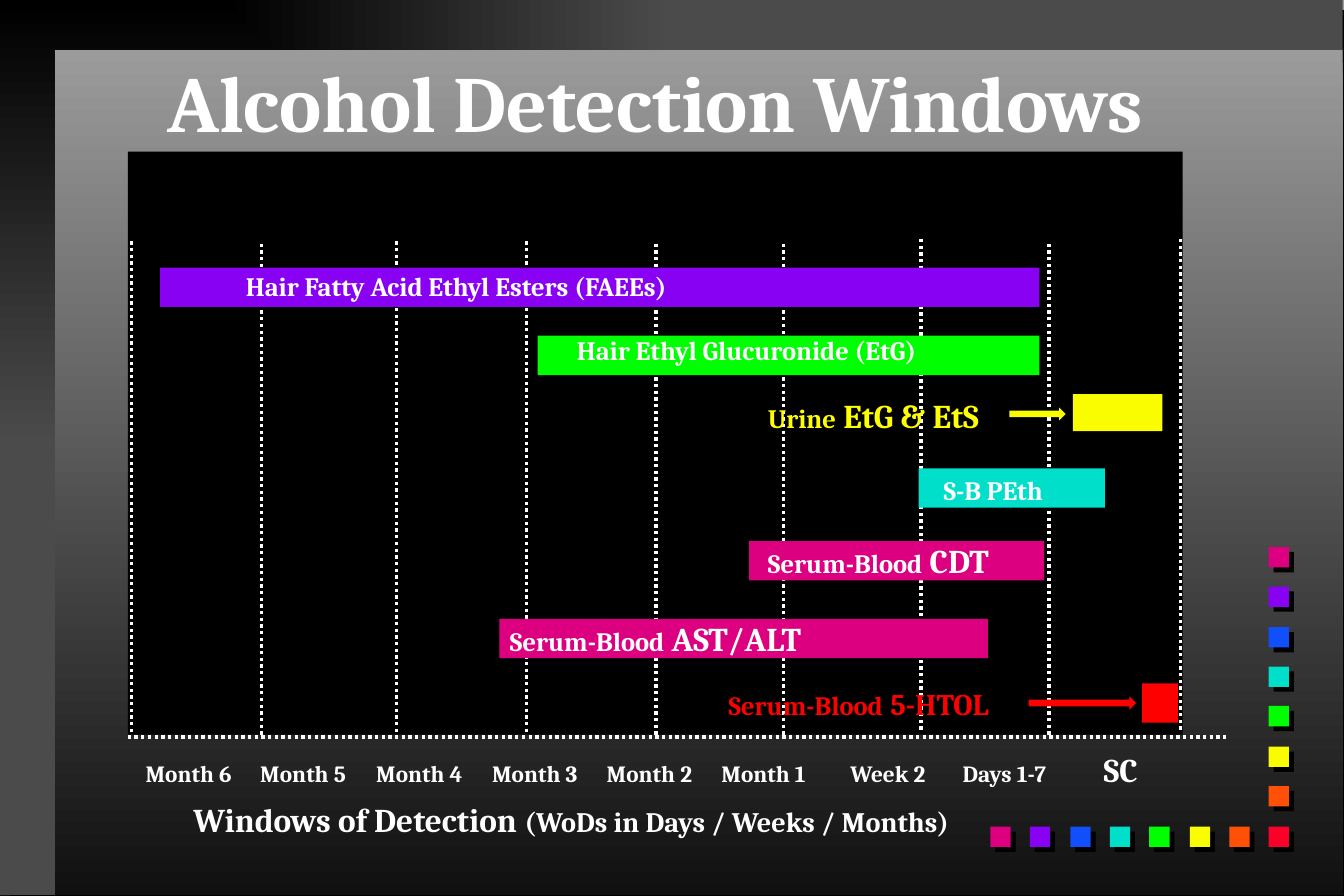
from dataclasses import dataclass

import lxml.etree
import pptx
import pptx.dml.color
import pptx.dml.fill
import pptx.enum.dml
import pptx.enum.shapes
import pptx.enum.text
import pptx.oxml
import pptx.oxml.ns
import pptx.shapes.autoshape
import pptx.slide
import pptx.text.text
import pptx.util

PX = 9144  # 100 px to the inch
FONT = "Cambria"
WHITE, BLACK, YELLOW, RED = "FFFFFF", "000000", "FAFD00", "FF0000"
GREEN, VIOLET, TEAL, PINK = "00FF00", "8901F3", "00DFCA", "DC0081"
PANEL_TOP, PANEL_BOTTOM, FRAME_END = "9B9B9B", "101010", "4B4B4B"
PALETTE = [PINK, VIOLET, "114FFB", TEAL, GREEN, YELLOW, "FF5008", "FC0128"]
RECTANGLE = pptx.enum.shapes.MSO_SHAPE.RECTANGLE
ARROW = pptx.enum.shapes.MSO_SHAPE.RIGHT_ARROW
LEFT, CENTER = pptx.enum.text.PP_ALIGN.LEFT, pptx.enum.text.PP_ALIGN.CENTER


@dataclass
class Box:
    left: int
    top: int
    width: int
    height: int

    def emu(self) -> list[int]:
        return [n * PX for n in (self.left, self.top, self.width, self.height)]


@dataclass
class Block:
    box: Box
    colour: str
    kind: int = RECTANGLE


@dataclass
class Label:
    box: Box
    pieces: list[tuple[str, int]]  # wording and size in points
    colour: str = WHITE
    wrap: bool = True
    align: int = LEFT


def rgb(colour: str) -> pptx.dml.color.RGBColor:
    return pptx.dml.color.RGBColor.from_string(colour)


def element(parent: lxml.etree._Element, tag: str, **attributes: object) -> lxml.etree._Element:
    child = lxml.etree.SubElement(parent, pptx.oxml.ns.qn(tag))
    for name, value in attributes.items():
        child.set(name, str(value))
    return child


def set_gradient(fill: pptx.dml.fill.FillFormat, start: str, end: str) -> None:
    fill.gradient()
    fill.gradient_angle = 270
    for stop, colour in zip(fill.gradient_stops, (start, end)):
        stop.color.rgb = rgb(colour)


def add_block(slide: pptx.slide.Slide, block: Block) -> pptx.shapes.autoshape.Shape:
    shape = slide.shapes.add_shape(block.kind, *block.box.emu())
    shape.shadow.inherit = False
    shape.fill.solid()
    shape.fill.fore_color.rgb = rgb(block.colour)
    shape.line.fill.background()
    return shape


def add_shadow(shape: pptx.shapes.autoshape.Shape, points: float) -> None:
    effects = shape._element.spPr.find(pptx.oxml.ns.qn("a:effectLst"))
    shadow = element(effects, "a:outerShdw", dist=int(pptx.util.Pt(points)),
                     dir=45 * 60000, algn="ctr", rotWithShape=0)
    element(shadow, "a:srgbClr", val=BLACK)


def add_dotted_line(slide: pptx.slide.Slide, x1: int, y1: int, x2: int, y2: int) -> None:
    line = slide.shapes.add_connector(pptx.enum.shapes.MSO_CONNECTOR.STRAIGHT,
                                      x1 * PX, y1 * PX, x2 * PX, y2 * PX)
    line.line.color.rgb = rgb(WHITE)
    line.line.width = pptx.util.Pt(2)
    line.line.dash_style = pptx.enum.dml.MSO_LINE.ROUND_DOT
    element(line._element.spPr, "a:effectLst")


def set_font(paragraph: pptx.text.text._Paragraph, colour: str) -> None:
    paragraph.font.name = FONT
    paragraph.font.bold = True
    paragraph.font.color.rgb = rgb(colour)


def add_label(slide: pptx.slide.Slide, label: Label) -> pptx.text.text._Paragraph:
    frame = slide.shapes.add_textbox(*label.box.emu()).text_frame
    frame.word_wrap = label.wrap
    paragraph = frame.paragraphs[0]
    paragraph.alignment = label.align
    set_font(paragraph, label.colour)
    for text, size in label.pieces:
        run = paragraph.add_run()
        run.text = text
        run.font.size = pptx.util.Pt(size)
    return paragraph


def add_backdrop(slide: pptx.slide.Slide) -> None:
    set_gradient(slide.background.fill, PANEL_TOP, PANEL_BOTTOM)
    # Frame, shaded outwards from the top left corner
    frame = add_block(slide, Block(Box(0, 0, 1124, 749), BLACK))
    set_gradient(frame.fill, BLACK, FRAME_END)
    gradient = frame._element.spPr.find(pptx.oxml.ns.qn("a:gradFill"))
    gradient.remove(gradient.find(pptx.oxml.ns.qn("a:lin")))
    outline = element(gradient, "a:path", path="rect")
    element(outline, "a:fillToRect", r=100000, b=100000)
    add_shadow(frame, 8.5)
    # Panel
    panel = add_block(slide, Block(Box(46, 42, 1078, 707), BLACK))
    set_gradient(panel.fill, PANEL_TOP, PANEL_BOTTOM)
    add_shadow(panel, 8.5)
    # Coloured squares: a row along the bottom and a column above its end
    for index, colour in enumerate(PALETTE):
        offset = round(index * 100 / 3)
        places = {(829 + offset, 692), (1062, 458 + offset + (index == 7))}
        for left, top in places:
            add_shadow(add_block(slide, Block(Box(left, top, 17, 17), colour)), 4.2)


def add_axis_labels(slide: pptx.slide.Slide) -> None:
    periods = [f"Month {number}" for number in range(6, 0, -1)] + ["Week 2", "Days 1-7"]
    paragraph = add_label(slide, Label(Box(112, 622, 971, 44),
                                       [("\t".join(periods) + "\t", 14), ("SC", 20)]))
    stops = element(paragraph._p.get_or_add_pPr(), "a:tabLst")
    paragraph._p.pPr.insert(0, stops)
    for position in [round(96.5 * step) for step in range(1, 6)] + [590, 684, 802]:
        element(stops, "a:tab", pos=position * PX, algn="l")


GRID_LINES = [(110, 202, 615), (219, 204, 617), (332, 202, 615),
              (441, 202, 615), (549, 204, 617), (656, 204, 617),
              (771, 200, 612), (878, 204, 617), (988, 200, 612)]  # x, top, bottom

BLOCKS = [
    Block(Box(134, 224, 736, 33), VIOLET),
    Block(Box(450, 281, 420, 33), GREEN),
    Block(Box(898, 330, 75, 31), YELLOW),
    Block(Box(769, 392, 156, 33), TEAL),
    Block(Box(627, 453, 247, 33), PINK),
    Block(Box(418, 518, 409, 33), PINK),
    Block(Box(956, 572, 30, 33), RED),
    Block(Box(845, 341, 47, 11), YELLOW, ARROW),
    Block(Box(861, 583, 90, 11), RED, ARROW),
]

LABELS = [
    Label(Box(196, 221, 656, 37), [("Hair Fatty Acid Ethyl Esters (FAEEs)", 16)]),
    Label(Box(463, 275, 324, 37), [("Hair Ethyl Glucuronide (EtG)", 16)],
          wrap=False, align=CENTER),
    Label(Box(633, 326, 230, 44), [("Urine", 16), (" EtG & EtS", 20)], "FFFF00"),
    Label(Box(780, 392, 144, 37), [("S-B PEth", 16)]),
    Label(Box(633, 447, 228, 44), [("Serum-Blood", 16), (" CDT", 20)]),
    Label(Box(417, 513, 286, 44), [("Serum-Blood", 16), (" AST/ALT", 20)]),
    Label(Box(600, 566, 273, 44), [("Serum-Blood", 16), (" ", 20), ("5-HTOL", 18)], RED),
    Label(Box(152, 664, 706, 44),
          [("Windows of Detection ", 20), ("(WoDs in Days / Weeks / Months)", 17)], wrap=False),
]


def add_title(slide: pptx.slide.Slide) -> None:
    title = slide.shapes.title
    title.left, title.top, title.width, title.height = Box(84, 1, 929, 129).emu()
    frame = title.text_frame
    frame.text = "Alcohol Detection Windows"
    frame.vertical_anchor = pptx.enum.text.MSO_ANCHOR.BOTTOM
    frame.auto_size = pptx.enum.text.MSO_AUTO_SIZE.NONE
    paragraph = frame.paragraphs[0]
    paragraph.alignment = CENTER
    paragraph.line_spacing = 0.9
    paragraph.font.size = pptx.util.Pt(48)
    set_font(paragraph, WHITE)
    slide.shapes._spTree.append(title._element)  # bring to the front


def main() -> None:
    presentation = pptx.Presentation()
    presentation.slide_width, presentation.slide_height = 1125 * PX, 750 * PX
    slide = presentation.slides.add_slide(presentation.slide_layouts[5])
    add_backdrop(slide)
    # Plot area with its axis and grid
    add_block(slide, Block(Box(107, 127, 883, 488), BLACK))
    add_axis_labels(slide)
    add_dotted_line(slide, 107, 617, 1029, 617)
    for x, top, bottom in GRID_LINES:
        add_dotted_line(slide, x, top, x, bottom)
    # Detection windows and their names
    for block in BLOCKS:
        add_block(slide, block)
    for label in LABELS:
        add_label(slide, label)
    add_title(slide)
    presentation.save("out.pptx")


if __name__ == "__main__":
    main()
